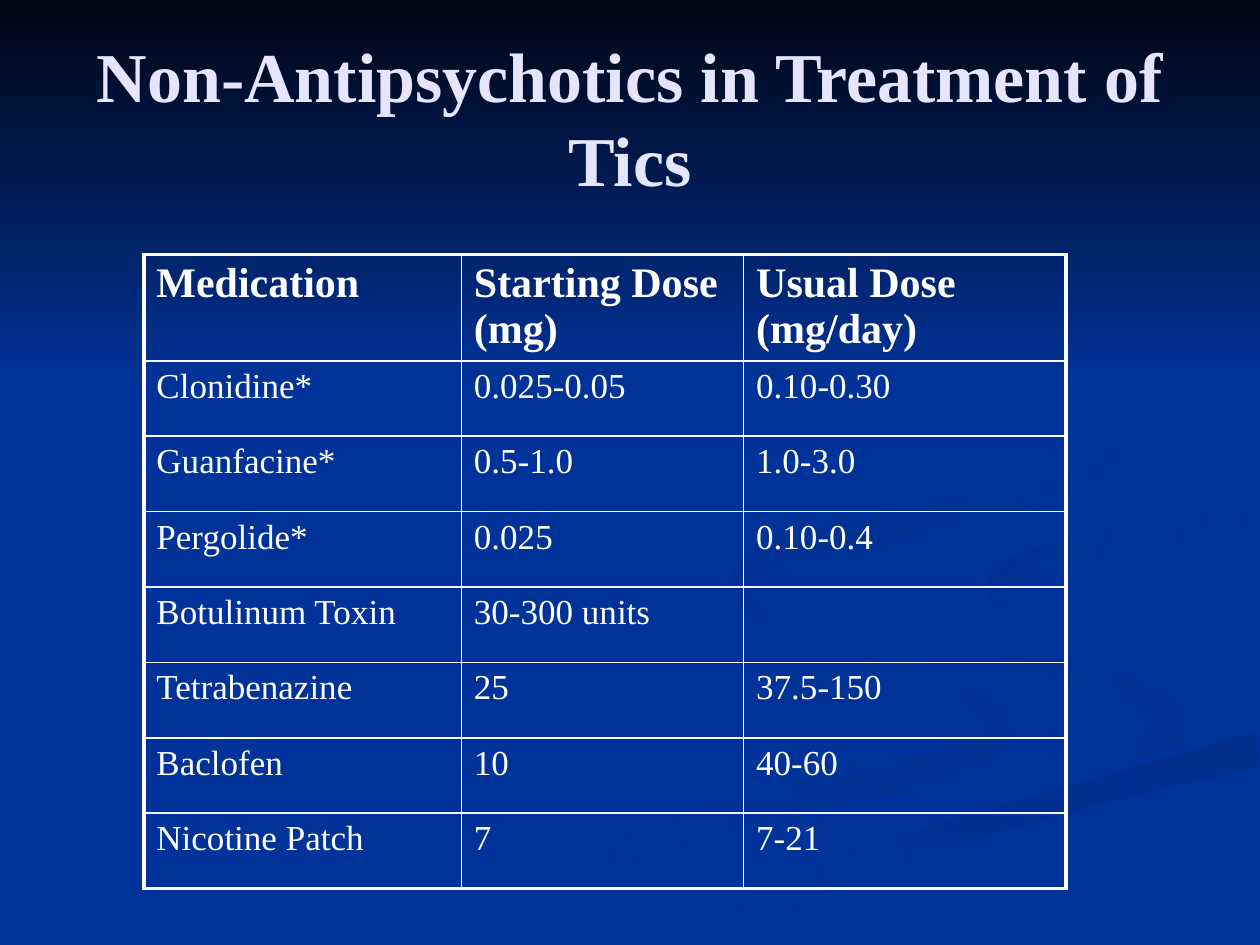
from math import hypot
from typing import NamedTuple

from lxml import etree
from pptx import Presentation
from pptx.dml.color import RGBColor
from pptx.enum.shapes import MSO_SHAPE
from pptx.enum.text import MSO_ANCHOR, PP_ALIGN
from pptx.oxml.ns import qn
from pptx.util import Cm, Pt

RECTANGLE = MSO_SHAPE.RECTANGLE
MIDDLE = MSO_ANCHOR.MIDDLE
CENTER = PP_ALIGN.CENTER

BLUE = RGBColor(0x00, 0x33, 0x99)
NIGHT = RGBColor(0x00, 0x05, 0x14)
LAVENDER = RGBColor(0xE5, 0xE5, 0xFF)
WHITE = RGBColor(0xFF, 0xFF, 0xFF)
SHADE_FAINT = RGBColor(0x00, 0x31, 0x93)
SHADE_SOFT = RGBColor(0x00, 0x30, 0x91)
SHADE_MEDIUM = RGBColor(0x00, 0x2F, 0x8E)
SHADE_DEEP = RGBColor(0x00, 0x2F, 0x8C)

FONT = "Times New Roman"
TITLE_FORMAT = {"name": FONT, "size": Pt(40), "bold": True}
HEADER_FORMAT = {"name": FONT, "size": Pt(24), "bold": True}
BODY_FORMAT = {"name": FONT, "size": Pt(20), "bold": False}
HEADER_MARGINS = {"margin_top": Cm(0.11), "margin_bottom": 0}

SLIDE_WIDTH, SLIDE_HEIGHT = Cm(25.4), Cm(19.05)
UNITS_PER_INCH = 100
RIBBON_UNIT = Cm(2.54) // UNITS_PER_INCH
STEPS_PER_BEND = 8

OUTER_BORDER = Pt(2.25)
INNER_BORDER = Pt(1)
COLUMN_WIDTHS = [Cm(6.4), Cm(5.69), Cm(6.5)]
HEADER_HEIGHT = Cm(2.12)
ROW_HEIGHT = Cm(1.52)
DOSES = [
    ("Medication", "Starting Dose (mg)", "Usual Dose (mg/day)"),
    ("Clonidine*", "0.025-0.05", "0.10-0.30"),
    ("Guanfacine*", "0.5-1.0", "1.0-3.0"),
    ("Pergolide*", "0.025", "0.10-0.4"),
    ("Botulinum Toxin", "30-300 units", ""),
    ("Tetrabenazine", "25", "37.5-150"),
    ("Baclofen", "10", "40-60"),
    ("Nicotine Patch", "7", "7-21"),
]


class Bend(NamedTuple):
    x: float
    y: float
    thickness: float


class Ribbon(NamedTuple):
    bends: list
    start_color: RGBColor
    end_color: RGBColor
    angle: int


LEFT_TAIL = Ribbon(
    [Bend(5.75, 4.6, 0), Bend(5.95, 4.88, 0.06), Bend(6.8, 5.19, 0.02),
     Bend(7.5, 5.42, 0.03), Bend(7.92, 5.73, 0.15), Bend(7.55, 6.05, 0.2),
     Bend(6.2, 6.38, 0.2), Bend(5, 6.74, 0.26), Bend(3.3, 7.49, 0.5)],
    BLUE, SHADE_FAINT, 0)
RIGHT_FOLD = Ribbon(
    [Bend(7.24, 4.64, 0), Bend(7.6, 5.04, 0.06), Bend(8.4, 5.29, 0.15),
     Bend(9.1, 5.54, 0.2), Bend(9.3, 5.77, 0.25), Bend(8.94, 6.05, 0)],
    BLUE, SHADE_FAINT, 45)
LOWER_BAND = Ribbon(
    [Bend(9.98, 5.95, 0.28), Bend(8.64, 6.3, 0.2), Bend(6.95, 6.8, 0.22),
     Bend(6, 7.2, 0.25), Bend(5.37, 7.49, 0.4)],
    SHADE_DEEP, BLUE, 90)
UPPER_BAND = Ribbon(
    [Bend(9.98, 4.11, 0.18), Bend(8.96, 4.27, 0.18), Bend(8.3, 4.42, 0.2),
     Bend(7.93, 4.67, 0.22), Bend(8.26, 4.96, 0)],
    SHADE_SOFT, BLUE, 45)
UPPER_CURL = Ribbon(
    [Bend(7.62, 2.33, 0), Bend(8.43, 2.77, 0.05), Bend(8.9, 3.4, 0.1),
     Bend(8.5, 3.83, 0.14), Bend(7.3, 4.14, 0.2), Bend(6.2, 4.36, 0.22),
     Bend(5.86, 4.65, 0.15), Bend(6.2, 5, 0)],
    SHADE_MEDIUM, BLUE, 45)
RIBBONS = [LEFT_TAIL, RIGHT_FOLD, LOWER_BAND, UPPER_BAND, UPPER_CURL]


def catmull_rom(before, start, end, after, t):
    return (2 * start + (end - before) * t
            + (2 * before - 5 * start + 4 * end - after) * t ** 2
            + (3 * start - before - 3 * end + after) * t ** 3) / 2


def smooth_path(bends):
    padded = [bends[0], *bends, bends[-1]]
    path = []
    for neighbours in zip(padded, padded[1:], padded[2:], padded[3:]):
        for step in range(STEPS_PER_BEND):
            t = step / STEPS_PER_BEND
            path.append(Bend(*(catmull_rom(*values, t)
                               for values in zip(*neighbours))))
    return path + [bends[-1]]


def ribbon_outline(bends):
    path = smooth_path(bends)
    near_edge, far_edge = [], []
    for before, here, after in zip(path[:1] + path, path, path[1:] + path[-1:]):
        run, rise = after.x - before.x, after.y - before.y
        half = max(here.thickness, 0) / 2 / hypot(run, rise)
        for edge, offset in ((near_edge, half), (far_edge, -half)):
            x = (here.x - rise * offset) * UNITS_PER_INCH
            y = (here.y + run * offset) * UNITS_PER_INCH
            edge.append((min(x, SLIDE_WIDTH / RIBBON_UNIT),
                         min(y, SLIDE_HEIGHT / RIBBON_UNIT)))
    return near_edge + far_edge[::-1]


def paint_gradient(shape, start_color, end_color, angle):
    shape.shadow.inherit = False
    shape.line.fill.background()
    shape.fill.gradient()
    shape.fill.gradient_angle = -angle % 360
    for stop, color in zip(shape.fill.gradient_stops, (start_color, end_color)):
        stop.color.rgb = color


def add_ribbon(slide, ribbon):
    first, *others = ribbon_outline(ribbon.bends)
    builder = slide.shapes.build_freeform(*first, scale=RIBBON_UNIT)
    builder.add_line_segments(others, close=True)
    paint_gradient(builder.convert_to_shape(),
                   ribbon.start_color, ribbon.end_color, ribbon.angle)


def add_night_sky(slide):
    sky = slide.shapes.add_shape(RECTANGLE, 0, 0, SLIDE_WIDTH, Cm(7.82))
    paint_gradient(sky, NIGHT, BLUE, 90)


def apply_format(target, values):
    for attribute, value in values.items():
        setattr(target, attribute, value)


def write_text(frame, text, color, font_format):
    run = frame.paragraphs[0].add_run()
    run.text = text
    apply_format(run.font, font_format)
    run.font.color.rgb = color


def add_title(slide, text):
    title = slide.shapes.add_textbox(Cm(1.27), Cm(0.76), Cm(22.86), Cm(3.18))
    frame = title.text_frame
    apply_format(frame, {"word_wrap": True, "vertical_anchor": MIDDLE})
    write_text(frame, text, LAVENDER, TITLE_FORMAT)
    frame.paragraphs[0].alignment = CENTER


def set_borders(cell, outer_sides):
    properties = cell._tc.get_or_add_tcPr()
    for side, is_outer in outer_sides.items():
        width = OUTER_BORDER if is_outer else INNER_BORDER
        border = etree.SubElement(properties, qn(f"a:ln{side}"), w=str(width))
        fill = etree.SubElement(border, qn("a:solidFill"))
        etree.SubElement(fill, qn("a:srgbClr"), val=str(WHITE))


def add_dose_table(slide):
    last_row, last_column = len(DOSES) - 1, len(COLUMN_WIDTHS) - 1
    table = slide.shapes.add_table(
        len(DOSES), len(COLUMN_WIDTHS), Cm(2.9), Cm(5.13),
        sum(COLUMN_WIDTHS), HEADER_HEIGHT + last_row * ROW_HEIGHT).table
    apply_format(table, {"first_row": False, "horz_banding": False})
    for column, width in zip(table.columns, COLUMN_WIDTHS):
        column.width = width
    for r, entries in enumerate(DOSES):
        is_header = r == 0
        table.rows[r].height = HEADER_HEIGHT if is_header else ROW_HEIGHT
        for c, entry in enumerate(entries):
            cell = table.cell(r, c)
            set_borders(cell, {"L": c == 0, "R": c == last_column,
                               "T": is_header, "B": r == last_row})
            cell.fill.background()
            if is_header:
                apply_format(cell, HEADER_MARGINS)
            if entry:
                write_text(cell.text_frame, entry, WHITE,
                           HEADER_FORMAT if is_header else BODY_FORMAT)


def main():
    deck = Presentation()
    deck.slide_width, deck.slide_height = SLIDE_WIDTH, SLIDE_HEIGHT
    slide = deck.slides.add_slide(deck.slide_layouts[6])
    slide.background.fill.solid()
    slide.background.fill.fore_color.rgb = BLUE
    for ribbon in RIBBONS:
        add_ribbon(slide, ribbon)
    add_night_sky(slide)
    add_title(slide, "Non-Antipsychotics in Treatment of Tics")
    add_dose_table(slide)
    deck.save("out.pptx")


if __name__ == "__main__":
    main()
